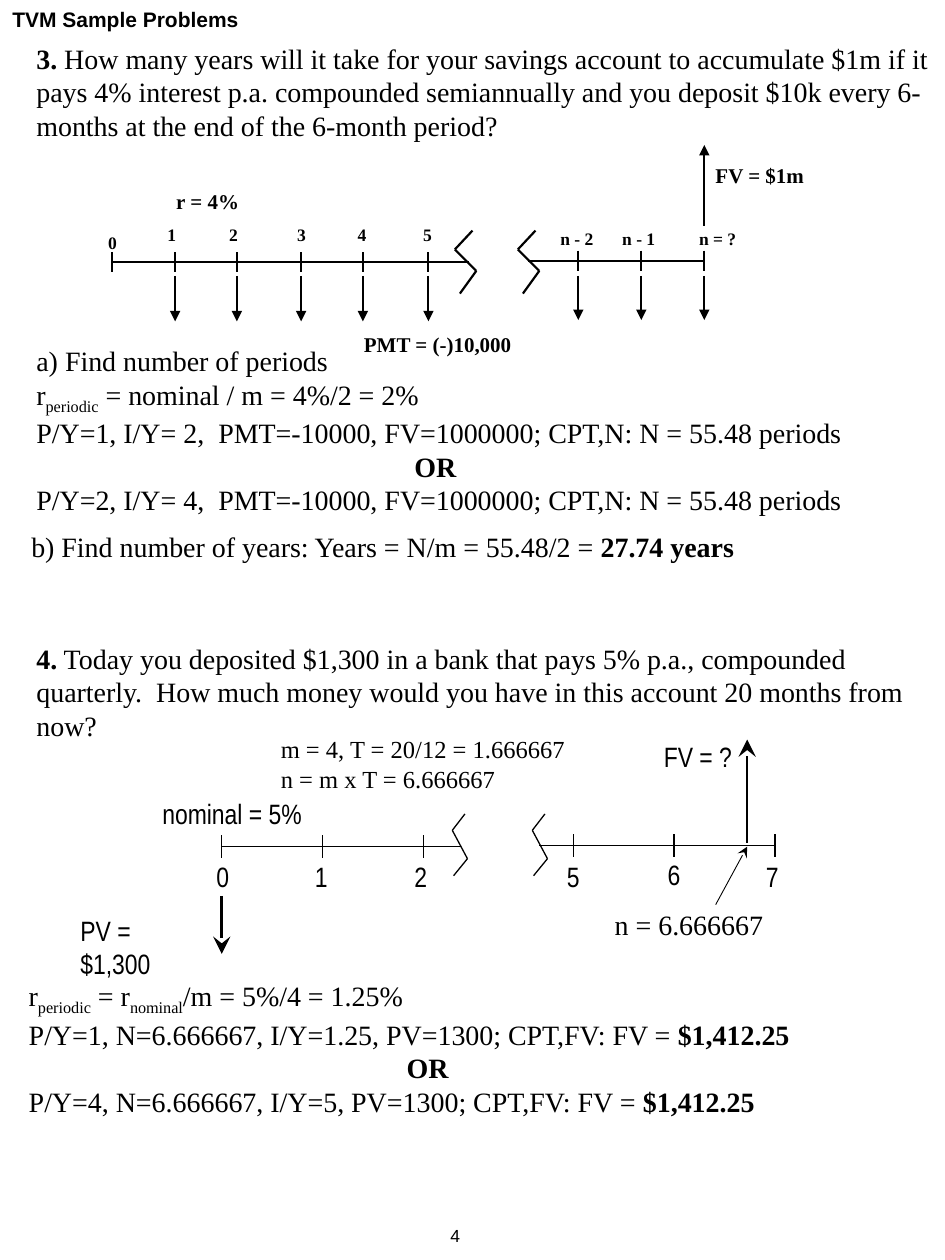
from dataclasses import dataclass
from itertools import pairwise

from lxml.etree import SubElement
from pptx import Presentation
from pptx.dml.color import RGBColor
from pptx.enum.shapes import MSO_CONNECTOR as Conn
from pptx.enum.text import MSO_AUTO_SIZE as AutoSize, PP_ALIGN as Align
from pptx.oxml.ns import qn
from pptx.util import Inches, Pt


@dataclass(frozen=True)
class Theme:
    ink: RGBColor = RGBColor(0, 0, 0)
    serif: str = "Times New Roman"
    sans: str = "Arial"
    narrow: str = "Arial Narrow"
    body: int = 16
    note: int = 14
    label: int = 12
    small: int = 10
    bold_line: float = 1.5
    line: float = 1.25
    thin: float = 0.75
    hair: float = 0.5


class Sheet:
    COLS, ROWS = 75, 100

    def __init__(self, prs, theme):
        self.theme = theme
        self.slide = prs.slides.add_slide(prs.slide_layouts[6])
        self.col = prs.slide_width / self.COLS
        self.row = prs.slide_height / self.ROWS

    def x(self, cols):
        return round(cols * self.col)

    def y(self, rows):
        return round(rows * self.row)

    def text(self, box, paras, size=None, font=None, wrap=True, align=Align.LEFT, fit=True):
        left, top, width, height = box
        sp = self.slide.shapes.add_textbox(self.x(left), self.y(top), self.x(width), self.y(height))
        tf = sp.text_frame
        tf.word_wrap = wrap
        tf.auto_size = AutoSize.SHAPE_TO_FIT_TEXT if fit else AutoSize.NONE
        for i, runs in enumerate(paras):
            p = tf.add_paragraph() if i else tf.paragraphs[0]
            p.alignment = align
            for words, style in runs:
                r = p.add_run()
                r.text = words
                r.font.size = Pt(size or self.theme.body)
                r.font.name = font or self.theme.serif
                r.font.color.rgb = self.theme.ink
                r.font.bold = style == "bold"
                if style == "sub":
                    r.font._element.set("baseline", "-25000")
        return tf

    def label(self, box, words, size=None, font=None, style="bold"):
        self.text(box, [[(words, style)]], size or self.theme.label, font, wrap=False)

    def line(self, start, end, width, head=None, head_size="med"):
        cx = self.slide.shapes.add_connector(
            Conn.STRAIGHT, self.x(start[0]), self.y(start[1]), self.x(end[0]), self.y(end[1]))
        cx.line.color.rgb = self.theme.ink
        cx.line.width = Pt(width)
        if head:
            SubElement(cx.line._get_or_add_ln(), qn("a:tailEnd"), type=head, w=head_size, len=head_size)
        SubElement(cx._element.spPr, qn("a:effectLst"))

    def ticks(self, columns, top, height, width):
        for c in columns:
            self.line((c, top), (c, top + height), width)

    def axis_break(self, points, gap, width):
        for shift in (0, gap):
            for (x1, y1), (x2, y2) in pairwise(points):
                self.line((x1 + shift, y1), (x2 + shift, y2), width)

    def centred_or(self, tf, index):
        tf.paragraphs[index]._p.get_or_add_pPr().set("marL", str(Inches(3)))


def savings_timeline(s):
    t = s.theme
    early, late = (13.9, 18.8, 23.9, 28.8, 34), (45.9, 50.9, 55.9)
    s.line((8.9, 20.8), (37.2, 20.8), t.line)
    s.line((41.9, 20.7), (55.8, 20.7), t.line)
    s.ticks((8.9, *early), 20, 1.6, t.line)
    s.ticks(late, 19.9, 1.6, t.line)
    for c in early + late:
        s.line((c, 21.9), (c, 25.5 if c in early else 25.4), t.line, "triangle")
    s.line((55.9, 17.9), (55.9, 11.5), t.line, "triangle")
    s.axis_break(((37.5, 18.3), (36.1, 19.8), (37.8, 21.5), (36.5, 23.3)), 5, t.line)
    s.label((7.6, 17.9, 2.7, 2.7), "0", t.small)
    for n, left in enumerate((12.3, 17.2, 22.6, 27.4, 32.6), 1):
        s.label((left, 17.3, 2.7, 2.7), str(n), t.small)
    for words, left, width in (("n - 2", 43.5, 4.6), ("n - 1", 48.4, 4.6), ("n = ?", 54.5, 5)):
        s.label((left, 17.6, width, 2.7), words, t.small)
    s.label((13, 14.5, 7.1, 3), "r = 4%")
    s.label((27.9, 25.8, 13.8, 3), "PMT = (-)10,000")
    s.label((55.8, 12.4, 9.1, 3), "FV = $1m")


def deposit_timeline(s):
    t = s.theme
    s.line((17.6, 67.2), (36.6, 67.2), t.thin)
    s.line((42.8, 67.1), (61.4, 67.1), t.thin)
    s.ticks((17.6, 25.6, 33.6), 66.3, 1.8, t.thin)
    s.ticks((45.5, 53.5, 61.5), 66.2, 1.8, t.thin)
    s.axis_break(((36.9, 64.6), (35.9, 65.9), (37.1, 68.15), (36, 69.5)), 6.35, t.thin)
    for words, left, top, width in (
            ("0", 16.2, 67.7, 3), ("1", 24, 67.7, 3), ("2", 31.9, 67.7, 3),
            ("5", 44, 67.7, 3), ("6", 52, 67.6, 3), ("7", 59.8, 67.7, 3),
            ("nominal = 5%", 11.9, 62.7, 13.2), ("PV = $1,300", 5.4, 72, 12), ("FV = ?", 51.7, 58.2, 7.4)):
        s.label((left, top, width, 3.7), words, t.body, t.narrow, "")
    s.label((47.8, 71.5, 13.8, 3.7), "n = 6.666667", t.body, style="")
    s.text((21.3, 57.8, 29.8, 5.7),
           [[("m = 4, T = 20/12 = 1.666667", "")], [("n = m x T = 6.666667", "")]], t.note)
    s.line((17.6, 71.1), (17.6, 75.7), t.bold_line, "stealth", "lg")
    s.line((59.3, 66.9), (59.3, 58.7), t.bold_line, "stealth", "lg")
    s.line((56.8, 71.8), (59.3, 67.2), t.hair, "stealth")


def main():
    prs = Presentation()
    prs.slide_width, prs.slide_height = Inches(7.5), Inches(10)
    t = Theme()
    s = Sheet(prs, t)

    s.text((0, 0, 32.5, 2.5), [[("TVM Sample Problems", "bold")]], t.label, t.sans, fit=False)
    s.text((32.5, 96.7, 5, 3.3), [[("4", "")]], t.small, t.sans, align=Align.RIGHT, fit=False)

    s.text((1.9, 2.8, 73.1, 9), [[("3.", "bold"), (
        " How many years will it take for your savings account to accumulate $1m if it pays 4% interest p.a. "
        "compounded semiannually and you deposit $10k every 6-months at the end of the 6-month period?", "")]])
    savings_timeline(s)
    keys = "P/Y={}, I/Y= {},  PMT=-10000, FV=1000000; CPT,N: N = 55.48 periods"
    periods = s.text((1.9, 26.8, 73.1, 14.5), [
        [("a) Find number of periods", "")],
        [("r", ""), ("periodic", "sub"), (" = nominal / m = 4%/2 = 2%", "")],
        [(keys.format(1, 2), "")],
        [("OR", "bold")],
        [(keys.format(2, 4), "")]])
    s.centred_or(periods, 3)
    s.text((1.5, 41.5, 71.3, 3.7), [[
        ("b) Find number of years: Years = N/m = 55.48/2 = ", ""), ("27.74 years", "bold")]])

    s.text((1.9, 50.4, 73.1, 9.1), [[("4.", "bold"), (
        " Today you deposited $1,300 in a bank that pays 5% p.a., compounded quarterly.  "
        "How much money would you have in this account 20 months from now?", "")]])
    deposit_timeline(s)
    keys = "P/Y={}, N=6.666667, I/Y={}, PV=1300; CPT,FV: FV = "
    value = s.text((1.3, 77.2, 73.7, 11.8), [
        [("r", ""), ("periodic", "sub"), (" = r", ""), ("nominal", "sub"), ("/m = 5%/4 = 1.25%", "")],
        [(keys.format(1, 1.25), ""), ("$1,412.25", "bold")],
        [("OR", "bold")],
        [(keys.format(4, 5), ""), ("$1,412.25", "bold")]])
    s.centred_or(value, 2)
    prs.save("out.pptx")


if __name__ == "__main__":
    main()
